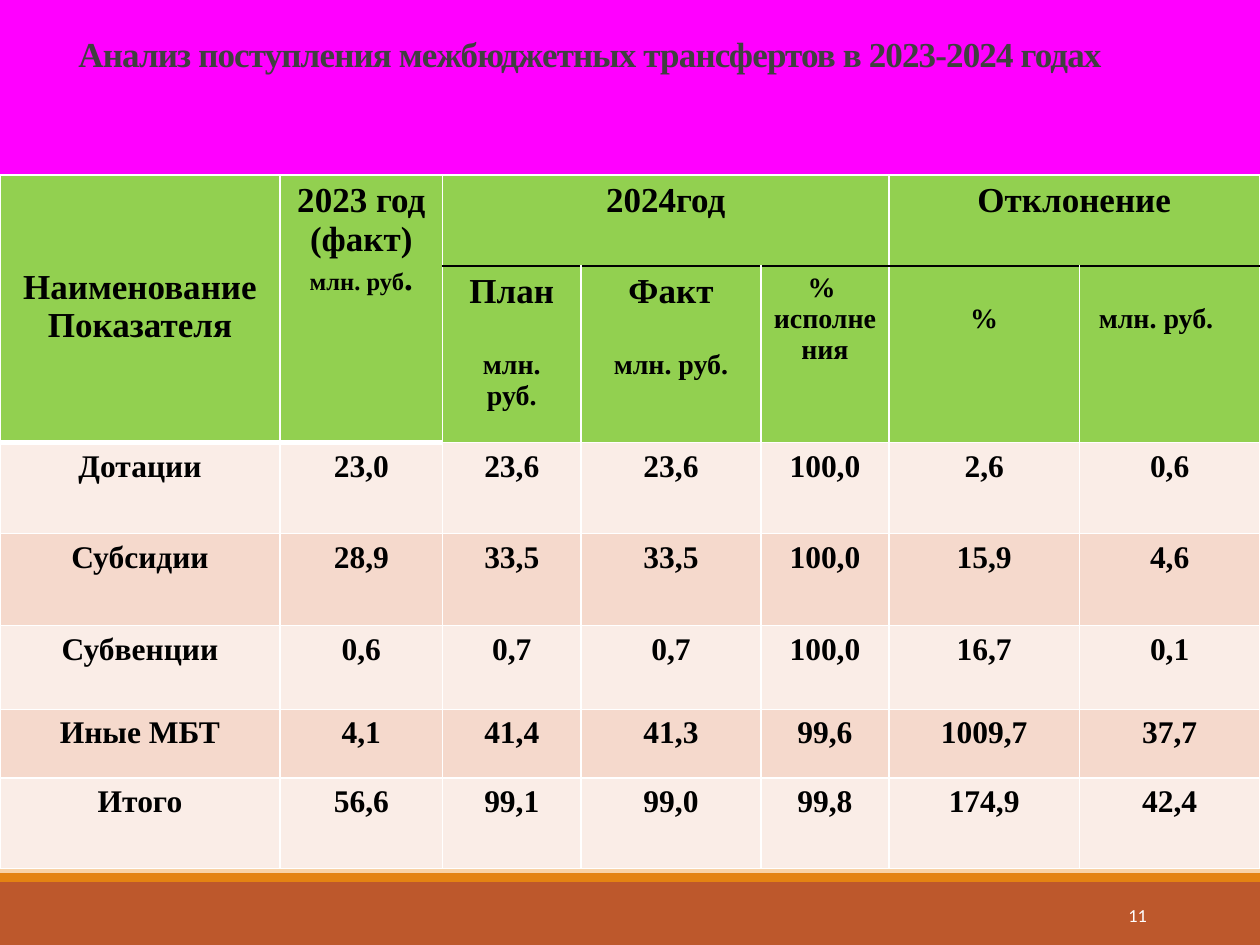
"""Build the slide on interbudget transfers received in 2023-2024."""
from lxml.etree import SubElement
from pptx import Presentation
from pptx.dml.color import RGBColor
from pptx.enum.shapes import MSO_SHAPE
from pptx.enum.text import MSO_ANCHOR, PP_ALIGN
from pptx.oxml.ns import qn
from pptx.util import Pt

COLORS = {
    "magenta": "FF00FF", "sand": "F6C791", "cream": "F9DAB6",
    "rust": "BD582C", "orange": "E48312", "title": "404040",
    "header": "92D050", "light": "FAEDE7", "dark": "F5D9CC",
    "white": "FFFFFF", "black": "000000",
}
SERIF, SANS = "Times New Roman", "Calibri"
COLUMNS = [160, 93, 79, 103, 73, 109, 103]
ROWS = [52, 101, 52, 52.5, 48, 39, 52]
DATA = [
    ["Дотации", "23,0", "23,6", "23,6", "100,0", "2,6", "0,6"],
    ["Субсидии", "28,9", "33,5", "33,5", "100,0", "15,9", "4,6"],
    ["Субвенции", "0,6", "0,7", "0,7", "100,0", "16,7", "0,1"],
    ["Иные МБТ", "4,1", "41,4", "41,3", "99,6", "1009,7", "37,7"],
    ["Итого", "56,6", "99,1", "99,0", "99,8", "174,9", "42,4"],
]
HEADER = {
    (0, 0): [[("Наименование", 20)], [("Показателя", 20)]],
    (0, 1): [[("2023 год (факт)", 20)], [("млн. руб", 14), (".", 20)]],
    (0, 2): [[("2024год", 20)]],
    (0, 5): [[("Отклонение", 20)]],
    (1, 2): [[("План", 20)], [("млн. руб.", 16)]],
    (1, 3): [[("Факт", 20)], [("млн. руб.", 16)]],
    (1, 4): [[("% ", 16)], [("исполнения", 16)]],
    (1, 5): [[("%", 16)]],
    (1, 6): [[("млн. руб.", 16)]],
}
MERGES = [((0, 0), (1, 0)), ((0, 1), (1, 1)), ((0, 2), (0, 4)), ((0, 5), (0, 6))]


class Deck:
    """Holds the style and the current slide."""

    def __init__(self, prs):
        """Add a title-only slide."""
        self.slide = prs.slides.add_slide(prs.slide_layouts[5])

    def rgb(self, name):
        """Return a named colour."""
        return RGBColor.from_string(COLORS[name])

    def background(self, stops):
        """Fill the background with a downward gradient."""
        fill = self.slide.background.fill
        fill.gradient()
        fill.gradient_angle = 270
        gs_lst = self.slide._element.find(".//" + qn("a:gsLst"))
        for gs in list(gs_lst):
            gs_lst.remove(gs)
        for pos, name in stops:
            gs = SubElement(gs_lst, qn("a:gs"), pos=str(pos * 1000))
            SubElement(gs, qn("a:srgbClr"), val=COLORS[name])

    def bar(self, top, height, color):
        """Draw a full-width bar."""
        sp = self.slide.shapes.add_shape(
            MSO_SHAPE.RECTANGLE, Pt(0), Pt(top), Pt(720), Pt(height))
        sp.shadow.inherit = False
        sp.fill.solid()
        sp.fill.fore_color.rgb = self.rgb(color)
        sp.line.fill.background()

    def run(self, p, text, size, color="black", font=SERIF, bold=True):
        """Add one formatted run."""
        r = p.add_run()
        r.text = text
        r.font.size, r.font.name, r.font.bold = Pt(size), font, bold
        r.font.color.rgb = self.rgb(color)
        return r

    def title(self, text):
        """Place and format the title placeholder."""
        sp = self.slide.shapes.title
        sp.left, sp.top, sp.width, sp.height = Pt(37), Pt(15), Pt(600), Pt(68)
        tf = sp.text_frame
        tf.word_wrap = True
        tf.vertical_anchor = MSO_ANCHOR.TOP
        p = tf.paragraphs[0]
        p.alignment = PP_ALIGN.CENTER
        r = self.run(p, text, 20, "title")
        r.font._element.set("spc", "-50")

    def number(self, text):
        """Add the slide number."""
        sp = self.slide.shapes.add_textbox(Pt(585), Pt(508.5), Pt(77.5), Pt(29))
        tf = sp.text_frame
        tf.word_wrap = True
        tf.vertical_anchor = MSO_ANCHOR.MIDDLE
        p = tf.paragraphs[0]
        p.alignment = PP_ALIGN.RIGHT
        self.run(p, text, 10.5, "white", SANS, False)

    def cell(self, cell, fill, borders, paragraphs=()):
        """Format one cell and write its paragraphs."""
        tc_pr = cell._tc.get_or_add_tcPr()
        for side in "LRTB":
            color, width = borders.get(side, ("white", 1))
            ln = SubElement(tc_pr, qn("a:ln" + side), w=str(Pt(width)))
            solid = SubElement(ln, qn("a:solidFill"))
            SubElement(solid, qn("a:srgbClr"), val=COLORS[color])
        cell.fill.solid()
        cell.fill.fore_color.rgb = self.rgb(fill)
        tf = cell.text_frame
        for i, runs in enumerate(paragraphs):
            p = tf.add_paragraph() if i else tf.paragraphs[0]
            p.alignment = PP_ALIGN.CENTER
            for text, size in runs:
                self.run(p, text, size)

    def table(self):
        """Add the table of transfers."""
        table = self.slide.shapes.add_table(
            len(ROWS), len(COLUMNS), Pt(0), Pt(100), Pt(720), Pt(sum(ROWS))).table
        for column, width in zip(table.columns, COLUMNS):
            column.width = Pt(width)
        for row, height in zip(table.rows, ROWS):
            row.height = Pt(height)
        for first, last in MERGES:
            table.cell(*first).merge(table.cell(*last))
        for r in range(2):
            for c in range(len(COLUMNS)):
                if c < 2:
                    borders = {"B": ("white", 3)}
                else:
                    borders = {"TB"[1 - r]: ("black", 1)}
                self.cell(table.cell(r, c), "header", borders, HEADER.get((r, c), ()))
        for r, values in enumerate(DATA, 2):
            for c, value in enumerate(values):
                borders = {"T": ("white", 3)} if r == 2 and c < 2 else {}
                fill = "dark" if r % 2 else "light"
                self.cell(table.cell(r, c), fill, borders, [[(value, 18)]])
        for c in (2, 3):
            table.cell(1, c).text_frame.paragraphs[1].space_before = Pt(22)
        for r, c, margin in ((0, 0, 53), (1, 5, 21.5), (1, 6, 21.5)):
            table.cell(r, c).margin_top = Pt(margin)
        amount = table.cell(1, 6)
        amount.margin_left = Pt(11)
        amount.text_frame.paragraphs[0].alignment = PP_ALIGN.LEFT


def main():
    """Build and save the presentation."""
    prs = Presentation()
    prs.slide_width, prs.slide_height = Pt(720), Pt(540)
    deck = Deck(prs)
    deck.background([(55, "magenta"), (74, "sand"), (83, "sand"), (100, "cream")])
    deck.bar(504, 36, "rust")
    deck.bar(499, 5, "orange")
    deck.title("Анализ поступления межбюджетных трансфертов в 2023-2024 годах")
    deck.table()
    deck.number("11")
    prs.save("out.pptx")


if __name__ == "__main__":
    main()
